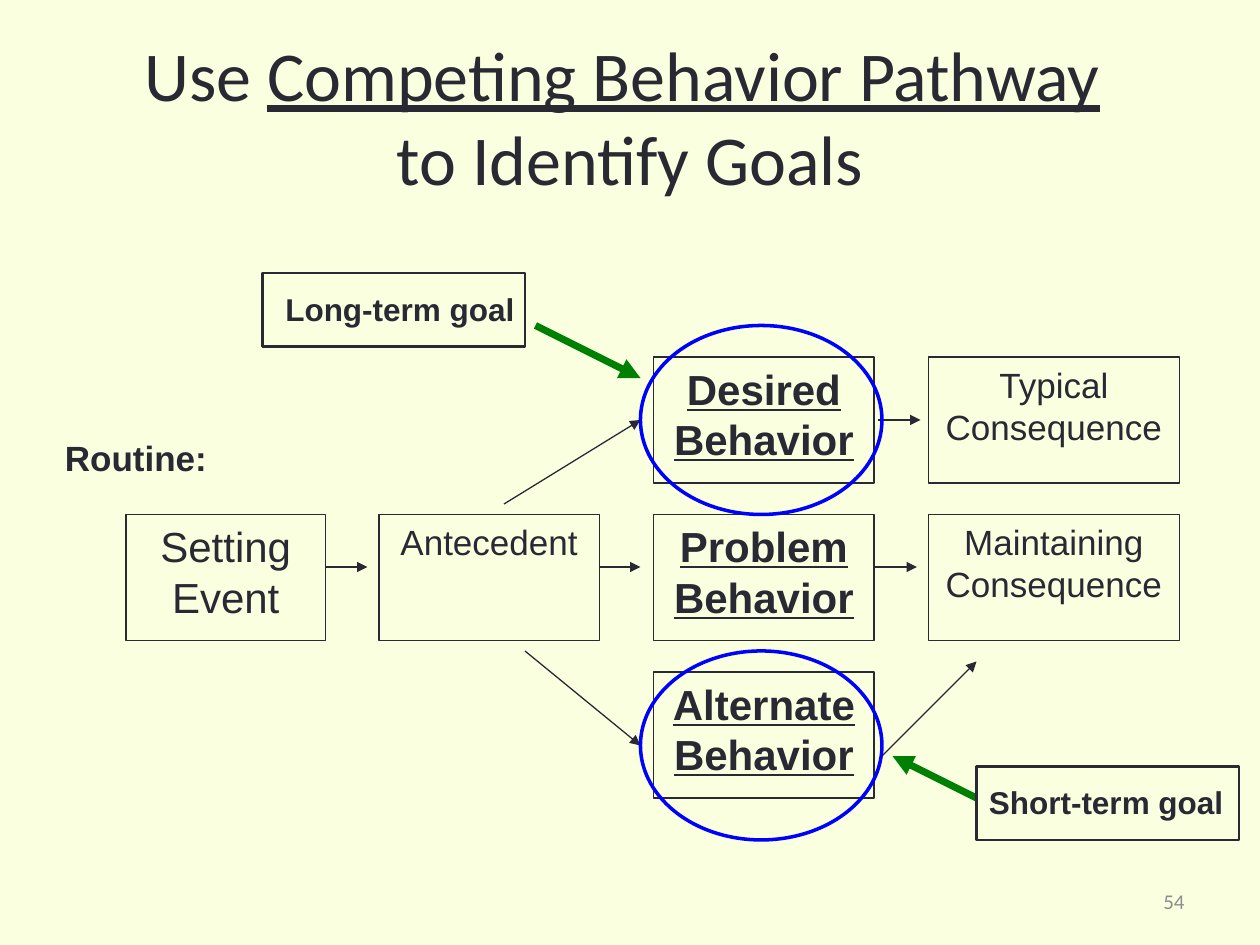
from lxml.etree import SubElement
from pptx import Presentation
from pptx.dml.color import RGBColor
from pptx.enum.shapes import MSO_CONNECTOR, MSO_SHAPE
from pptx.enum.text import MSO_ANCHOR, PP_ALIGN
from pptx.oxml.ns import qn
from pptx.util import Pt

INK, BLUE, GREEN, GREY, CREAM = "292934", "0000FF", "008000", "8D8D8F", "FAFFE0"


def color(value):
    return RGBColor.from_string(value)


def write(shape, lines, size=20, font="Arial", ink=INK, bold=False,
          align=PP_ALIGN.LEFT, anchor=MSO_ANCHOR.TOP):
    """Fill a shape with one paragraph; each line is a list of (text, underline)."""
    frame = shape.text_frame
    frame.word_wrap = True
    frame.vertical_anchor = anchor
    para = frame.paragraphs[0]
    para.alignment = align
    for number, line in enumerate(lines):
        if number:
            para.add_line_break()
        for text, underline in line:
            span = para.add_run()
            span.text = text
            span.font.name = font
            span.font.size = Pt(size)
            span.font.bold = bold
            span.font.underline = underline
            span.font.color.rgb = color(ink)


def add_text(page, box, lines, **style):
    label = page.shapes.add_textbox(*map(Pt, box))
    write(label, lines, **style)


def add_outline(page, box, kind=MSO_SHAPE.RECTANGLE, ink=INK, width=0.75):
    shape = page.shapes.add_shape(kind, *map(Pt, box))
    shape.shadow.inherit = False
    shape.fill.background()
    shape.line.color.rgb = color(ink)
    shape.line.width = Pt(width)
    return shape


def add_arrow(page, start, end, ink=INK, width=0.75):
    arrow = page.shapes.add_connector(MSO_CONNECTOR.STRAIGHT, *map(Pt, start + end))
    arrow.line.color.rgb = color(ink)
    arrow.line.width = Pt(width)
    SubElement(arrow.line._get_or_add_ln(), qn("a:tailEnd"), type="triangle")
    SubElement(arrow._element.spPr, qn("a:effectLst"))


def add_title(page, box):
    lines = [[("Use ", False), ("Competing Behavior Pathway", True), (" ", False)],
             [("to Identify Goals", False)]]
    add_text(page, box, lines, size=40, font="Calibri",
             align=PP_ALIGN.CENTER, anchor=MSO_ANCHOR.MIDDLE)


def add_pathway(page, left, top):
    """Steps in four columns and three rows, with arrows between them."""
    row_step, height = 90, 72
    columns = [(0, 114), (144.5, 126), (301.5, 126), (458.5, 143.5)]
    steps = [  # column, row, text, size, stressed
        (3, 0, "Typical Consequence", 20, False),
        (3, 1, "Maintaining Consequence", 20, False),
        (2, 0, "Desired Behavior", 24, True),
        (2, 1, "Problem Behavior", 24, True),
        (2, 2, "Alternate Behavior", 24, True),
        (1, 1, "Antecedent", 20, False),
        (0, 1, "Setting Event", 24, False),
    ]
    for column, row, text, size, stressed in steps:
        offset, width = columns[column]
        step = add_outline(page, (left + offset, top + row * row_step, width, height))
        write(step, [[(text, stressed)]], size=size, bold=stressed,
              align=PP_ALIGN.CENTER)

    # Routine label above the first step
    add_text(page, (left - 42, top + 42, 252, 31), [[("Routine:", False)]], bold=True)

    # Level arrows, then the branches to and from the outer rows
    arrows = [((x, y), (x + 24, y))
              for x, y in [(114, 120), (270, 120), (428, 120), (430, 36)]]
    arrows += [((216, 84), (294, 36)), ((228, 168), (294, 222)),
               ((432, 228), (486, 174))]
    for start, end in arrows:
        add_arrow(page, (left + start[0], top + start[1]),
                  (left + end[0], top + end[1]))

    # Rings around the desired and the alternate behavior
    for ring_top in (-18, 168):
        add_outline(page, (left + 294, top + ring_top, 138, 108),
                    MSO_SHAPE.OVAL, BLUE, 2)


def add_goal(page, left, top, text, indent, start, end):
    """Framed goal with a green arrow; arrow ends are relative to the frame."""
    add_arrow(page, (left + start[0], top + start[1]),
              (left + end[0], top + end[1]), GREEN, 4)
    add_outline(page, (left, top, 150, 42), width=1.5)
    add_text(page, (left + indent, top + 6, 162, 29), [[(text, False)]],
             size=18, bold=True)


def add_page_number(page, box):
    add_text(page, box, [[("54", False)]], size=12, font="Calibri", ink=GREY,
             align=PP_ALIGN.RIGHT, anchor=MSO_ANCHOR.MIDDLE)


def main():
    deck = Presentation()
    deck.slide_width, deck.slide_height = Pt(720), Pt(540)
    page = deck.slides.add_slide(deck.slide_layouts[6])
    page.background.fill.solid()
    page.background.fill.fore_color.rgb = color(CREAM)

    add_title(page, (18, 12, 684, 108))
    add_pathway(page, 72, 204)
    add_goal(page, 150, 156, "Long-term goal", 6, (156, 30), (216, 60))
    add_goal(page, 558, 438, "Short-term goal", 0, (0, 18), (-48, -6))
    add_page_number(page, (516, 500.5, 168, 28.75))
    deck.save("out.pptx")


if __name__ == "__main__":
    main()
